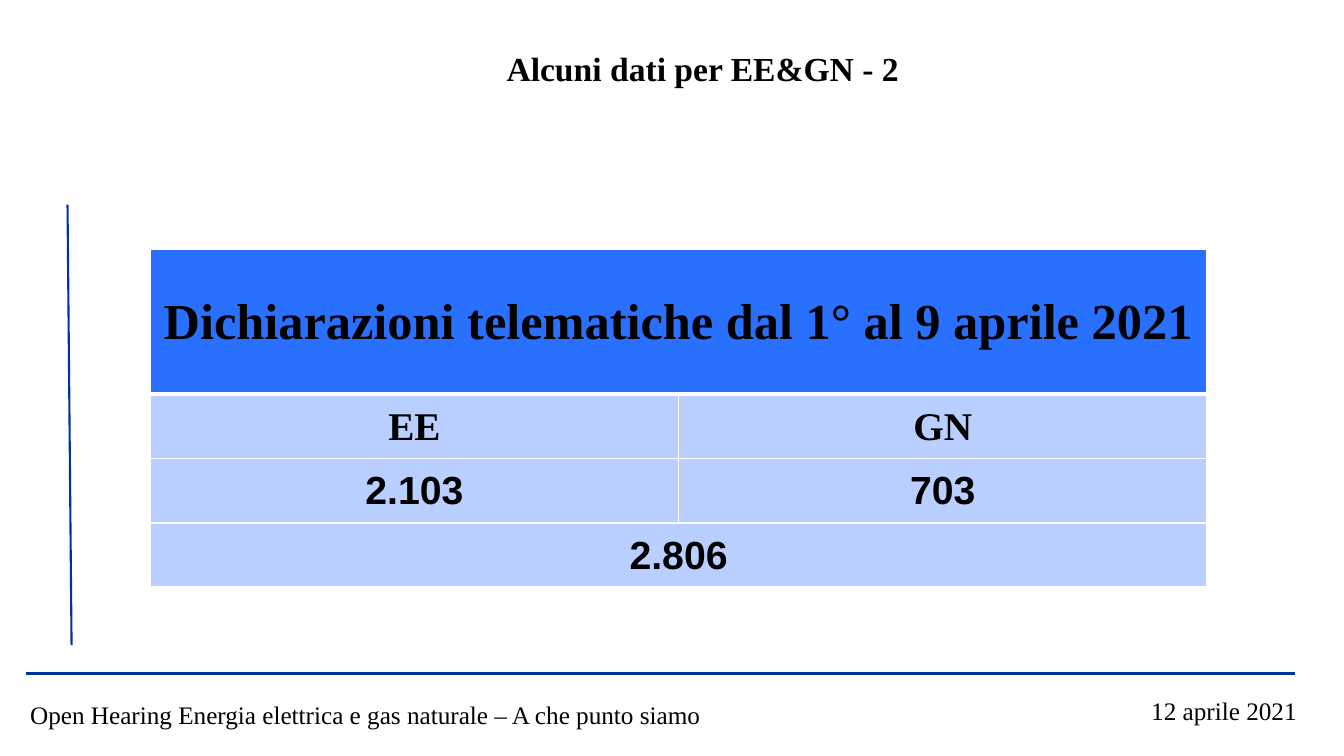
from pptx import Presentation
from pptx.util import Inches, Pt
from pptx.dml.color import RGBColor
from pptx.enum.shapes import MSO_CONNECTOR
from pptx.enum.text import MSO_ANCHOR, MSO_AUTO_SIZE, PP_ALIGN
from pptx.oxml import parse_xml
from pptx.oxml.ns import nsdecls
from lxml.etree import SubElement

SERIF, SANS = "Times New Roman", "Arial"
BLACK, WHITE, NAVY = "000000", "FFFFFF", "003399"
BLUE, PALE = "2970FF", "B8CFFF"
LEFT, WIDTH, ROW = 1.49, 10.48, 0.64


def color(text):
    return RGBColor.from_string(text)


def add_run(para, text, size, face=SERIF, bold=False):
    run = para.add_run()
    run.text = text
    font = run.font
    font.size, font.name, font.bold = Pt(size), face, bold
    font.color.rgb = color(BLACK)


def add_title(slide, text, box):
    title = slide.shapes.title
    title.left, title.top, title.width, title.height = map(Inches, box)
    frame = title.text_frame
    frame.word_wrap = True
    frame.auto_size = MSO_AUTO_SIZE.NONE
    frame.vertical_anchor = MSO_ANCHOR.TOP
    para = frame.paragraphs[0]
    para.alignment = PP_ALIGN.CENTER
    add_run(para, text, 24, bold=True)


def add_text(slide, text, box):
    frame = slide.shapes.add_textbox(*map(Inches, box)).text_frame
    frame.word_wrap = True
    add_run(frame.paragraphs[0], text, 18)


def add_line(slide, start, end, width):
    ends = map(Inches, start + end)
    line = slide.shapes.add_connector(MSO_CONNECTOR.STRAIGHT, *ends)
    line.line.color.rgb = color(NAVY)
    line.line.width = Pt(width)
    props = line._element.spPr
    SubElement(props, "{http://schemas.openxmlformats.org/drawingml/2006/main}effectLst")


def set_edges(cell, base):
    # Cell borders come before the fill in the cell properties
    props = cell._tc.get_or_add_tcPr()
    for place, side in enumerate("LRTB"):
        width = Pt(base if side == "B" else 1)
        props.insert(place, parse_xml(
            f'<a:ln{side} {nsdecls("a")} w="{width}"><a:solidFill>'
            f'<a:srgbClr val="{WHITE}"/></a:solidFill></a:ln{side}>'))


def fill_cell(cell, text, size, face, fill, base):
    cell.fill.solid()
    cell.fill.fore_color.rgb = color(fill)
    cell.vertical_anchor = MSO_ANCHOR.MIDDLE
    cell.margin_left = cell.margin_right = cell.margin_top = Inches(0.01)
    cell.margin_bottom = 0
    para = cell.text_frame.paragraphs[0]
    para.alignment = PP_ALIGN.CENTER
    if text:
        add_run(para, text, size, face, True)
    set_edges(cell, base)


def add_grid(slide, top, rows, cols):
    """Each row holds its height, texts, size, face, fill and bottom border."""
    total = sum(row[0] for row in rows)
    box = map(Inches, (LEFT, top, WIDTH, total))
    table = slide.shapes.add_table(len(rows), cols, *box).table
    for col in table.columns:
        col.width = Inches(WIDTH / cols)
    for r, (height, texts, *style) in enumerate(rows):
        table.rows[r].height = Inches(height)
        for c, text in enumerate(texts):
            fill_cell(table.cell(r, c), text, *style)
    return table


def main():
    deck = Presentation()
    deck.slide_width, deck.slide_height = Inches(13.33), Inches(7.5)
    slide = deck.slides.add_slide(deck.slide_layouts[5])

    # Title and rules
    add_line(slide, (0.26, 6.68), (12.84, 6.68), 2.25)
    add_title(slide, "Alcuni dati per EE&GN - 2", (1.96, 0.43, 10.02, 0.5))
    add_line(slide, (0.67, 2.03), (0.71, 6.4), 1.5)

    # Declarations by sector, then their total
    table = add_grid(slide, 2.47, [
        (1.44, ["Dichiarazioni telematiche dal 1° al 9 aprile 2021", ""],
         36, SERIF, BLUE, 3),
        (ROW, ["EE", "GN"], 28, SERIF, PALE, 1),
        (ROW, ["2.103", "703"], 28, SANS, PALE, 1),
    ], 2)
    table.cell(0, 0).merge(table.cell(0, 1))
    add_grid(slide, 5.19, [(ROW, ["2.806"], 28, SANS, PALE, 3)], 1)

    # Footer
    add_text(slide, "Open Hearing Energia elettrica e gas naturale – A che punto siamo",
             (0.2, 6.89, 7.61, 0.4))
    add_text(slide, "12 aprile 2021", (11.32, 6.85, 1.7, 0.4))

    deck.save("out.pptx")


if __name__ == "__main__":
    main()
